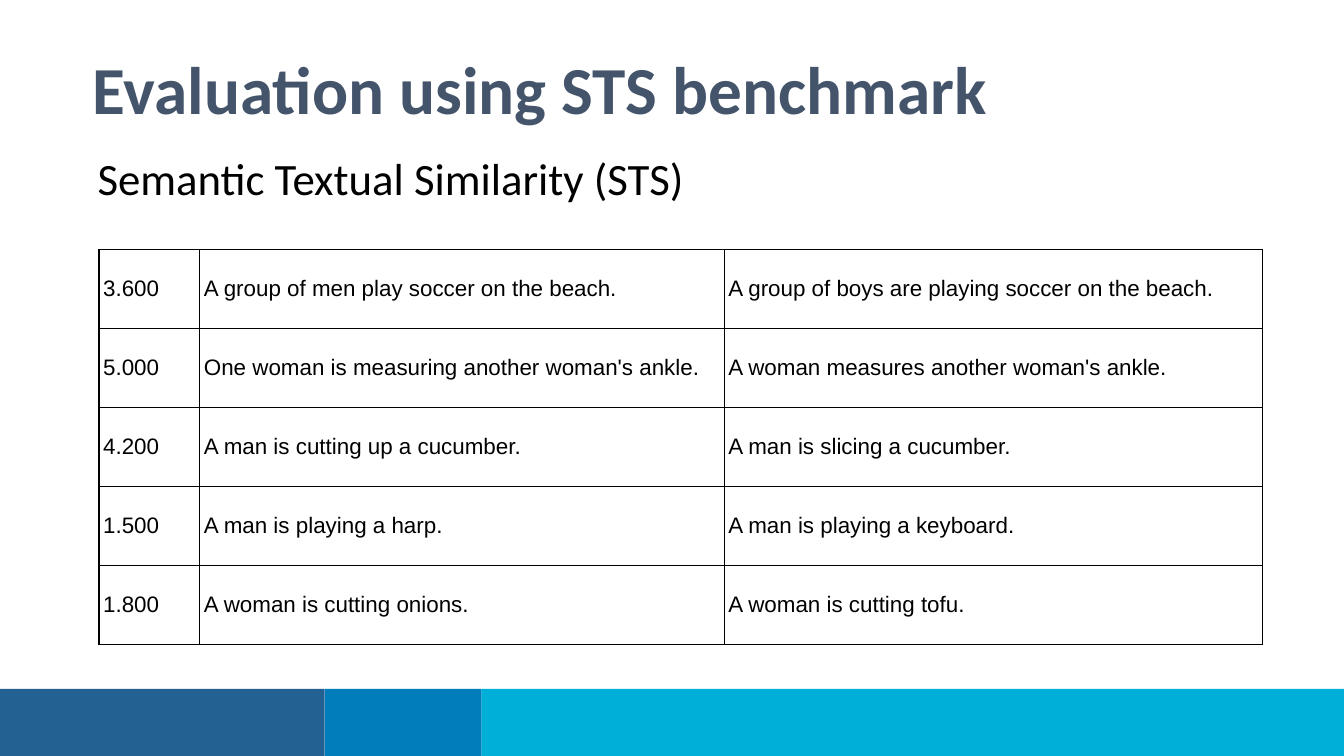
from lxml.etree import SubElement
from pptx import Presentation
from pptx.dml.color import RGBColor
from pptx.enum.shapes import MSO_SHAPE as Preset
from pptx.enum.text import MSO_ANCHOR as Anchor, MSO_AUTO_SIZE as AutoSize, PP_ALIGN as Align
from pptx.oxml.ns import qn
from pptx.util import Pt

SLATE = RGBColor(0x44, 0x54, 0x6A)
BLACK = RGBColor(0, 0, 0)
NAVY = RGBColor(0x23, 0x61, 0x92)
BLUE = RGBColor(0x00, 0x7D, 0xBA)
CYAN = RGBColor(0x00, 0xAF, 0xD7)

HEADING = "Evaluation using STS benchmark"
TOPIC = "Semantic Textual Similarity (STS)"
SENTENCE_PAIRS = [
    ("3.600", "A group of men play soccer on the beach.",
     "A group of boys are playing soccer on the beach."),
    ("5.000", "One woman is measuring another woman's ankle.",
     "A woman measures another woman's ankle."),
    ("4.200", "A man is cutting up a cucumber.", "A man is slicing a cucumber."),
    ("1.500", "A man is playing a harp.", "A man is playing a keyboard."),
    ("1.800", "A woman is cutting onions.", "A woman is cutting tofu."),
]
COLUMN_WIDTHS = [54, 281, 288.5]
ROW_HEIGHT = 42.33
FOOTER_BANDS = [(174, NAVY), (84, BLUE), (462, CYAN)]
SLIDE_WIDTH, SLIDE_HEIGHT, FOOTER_HEIGHT = 720, 405, 36


def fill_placeholder(holder, box, text, size, color, bold, indent):
    holder.left, holder.top, holder.width, holder.height = map(Pt, box)
    frame = holder.text_frame
    frame.text = text
    frame.word_wrap = True
    frame.auto_size = AutoSize.NONE
    frame.vertical_anchor = Anchor.TOP
    frame.margin_left = frame.margin_right = Pt(5.25)
    frame.margin_top = frame.margin_bottom = Pt(2.6)
    line = frame.paragraphs[0]
    line.alignment = Align.LEFT
    line.line_spacing = 0.9
    line.space_before = Pt(0)
    properties = line._p.get_or_add_pPr()
    properties.set("marL", str(Pt(indent)))
    properties.set("indent", "0")
    SubElement(properties, qn("a:buNone"))
    style_font(line.font, "Calibri", size, color, bold)


def style_font(font, name, size, color, bold=False):
    font.name = name
    font.size = Pt(size)
    font.bold = bold
    font.color.rgb = color


def add_borders(cell):
    properties = cell._tc.get_or_add_tcPr()
    for position, side in enumerate(("lnL", "lnR", "lnT", "lnB")):
        border = properties.makeelement(qn(f"a:{side}"), {"w": str(Pt(0.75))})
        properties.insert(position, border)
        paint = SubElement(border, qn("a:solidFill"))
        SubElement(paint, qn("a:srgbClr"), val=str(BLACK))


def add_similarity_table(slide):
    table = slide.shapes.add_table(
        len(SENTENCE_PAIRS), len(COLUMN_WIDTHS), Pt(53), Pt(133.75),
        Pt(sum(COLUMN_WIDTHS)), Pt(ROW_HEIGHT * len(SENTENCE_PAIRS))).table
    table.first_row = table.horz_banding = False
    for column, width in zip(table.columns, COLUMN_WIDTHS):
        column.width = Pt(width)
    for row, pair in zip(table.rows, SENTENCE_PAIRS):
        row.height = Pt(ROW_HEIGHT)
        for cell, text in zip(row.cells, pair):
            cell.text = text
            cell.fill.background()
            cell.vertical_anchor = Anchor.MIDDLE
            cell.margin_left = cell.margin_right = Pt(2.25)
            cell.margin_top = cell.margin_bottom = Pt(2.25)
            style_font(cell.text_frame.paragraphs[0].font, "Arial", 12, BLACK)
            add_borders(cell)


def add_footer(slide):
    left = 0
    for width, color in FOOTER_BANDS:
        band = slide.shapes.add_shape(
            Preset.RECTANGLE, Pt(left), Pt(SLIDE_HEIGHT - FOOTER_HEIGHT),
            Pt(width), Pt(FOOTER_HEIGHT))
        band.shadow.inherit = False
        band.fill.solid()
        band.fill.fore_color.rgb = color
        band.line.fill.background()
        left += width


def main():
    deck = Presentation()
    deck.slide_width, deck.slide_height = Pt(SLIDE_WIDTH), Pt(SLIDE_HEIGHT)
    slide = deck.slides.add_slide(deck.slide_layouts[1])
    heading, topic = slide.placeholders
    add_footer(slide)
    fill_placeholder(heading, (26.5, 27.5, 664.5, 54), HEADING, 36, SLATE, True, 18)
    fill_placeholder(topic, (41, 81.5, 664.5, 264), TOPIC, 24, BLACK, False, 6)
    add_similarity_table(slide)
    deck.save("out.pptx")


if __name__ == "__main__":
    main()
